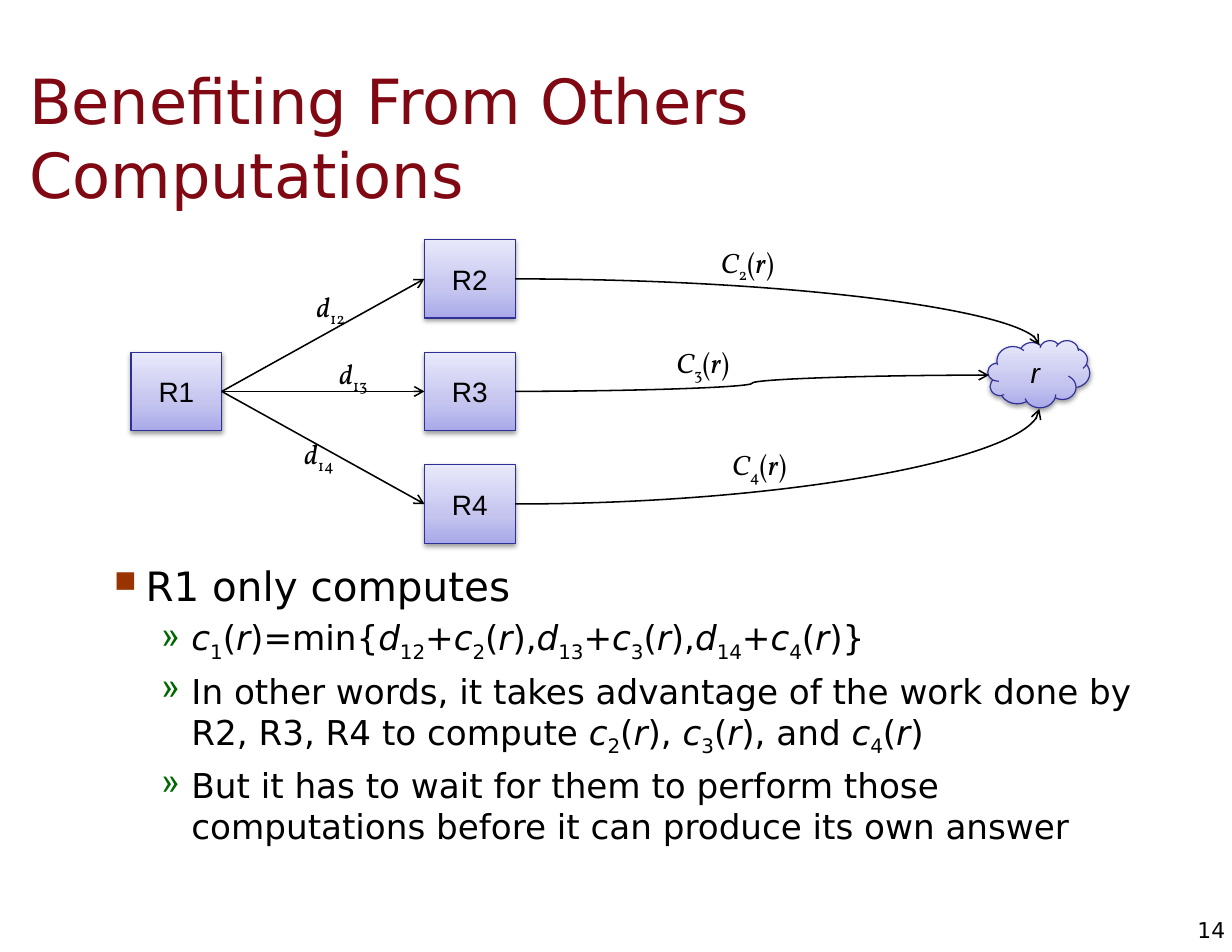
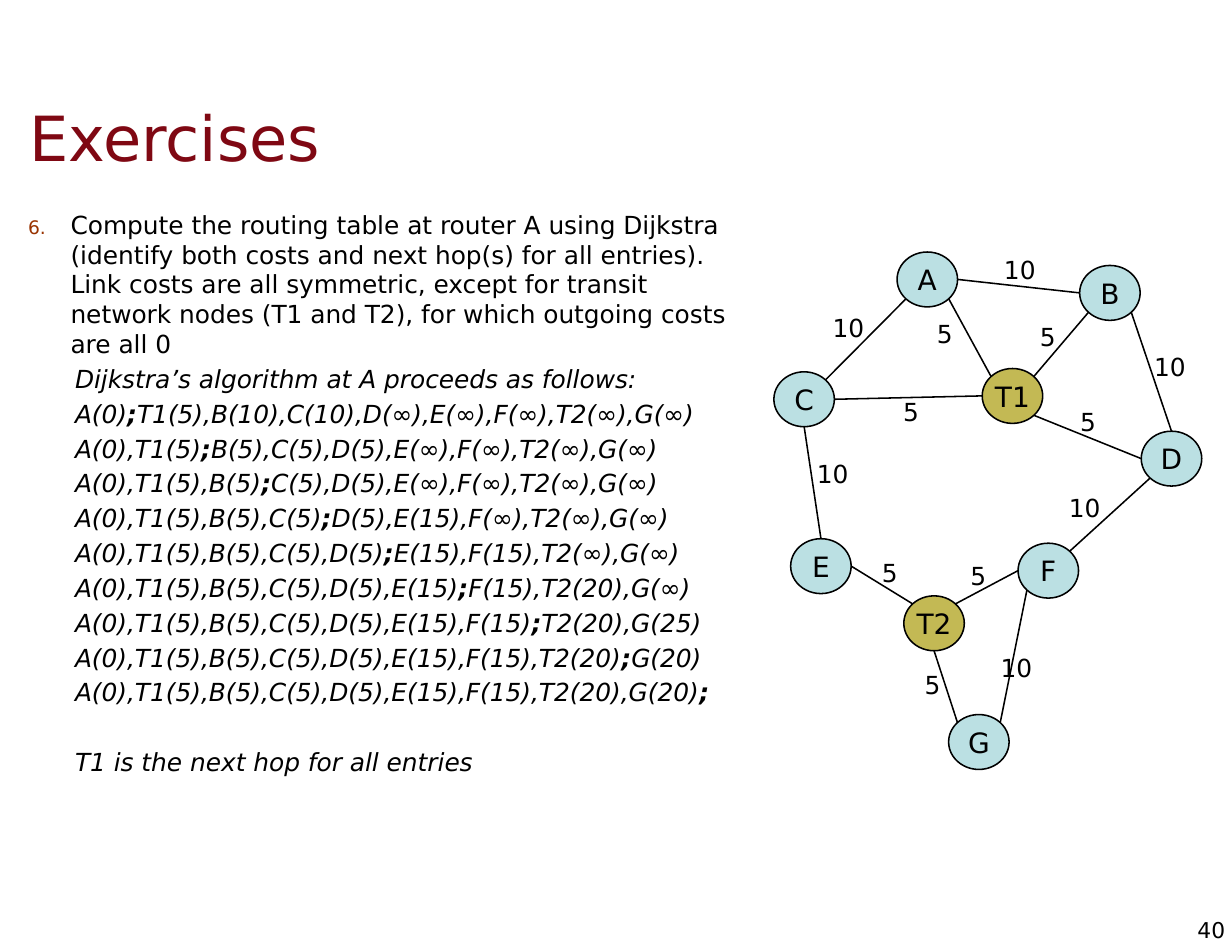
from dataclasses import dataclass

from pptx import Presentation, util as u
from pptx.dml.color import RGBColor
from pptx.enum import shapes, text
from pptx.oxml import parse_xml
from pptx.oxml.ns import nsdecls, qn


@dataclass(frozen=True)
class Theme:
    """Colours, fonts and type sizes of the deck."""
    ink: str = "000000"
    head: str = "7F0813"
    mark: str = "993300"
    sub: str = "006600"
    edge: str = "2F2F98"
    node: str = "BBE0E3"
    hub: str = "C3B954"
    fade: tuple = ((0, "A9A9E9"), (35, "C4C4EF"), (100, "E8E8FA"))
    sans: str = "DejaVu Sans"
    plain: str = "Arial"
    serif: str = "Vollkorn"
    title: int = 40
    lead: int = 26
    point: int = 22
    label: int = 18
    small: int = 16
    page: int = 14


T = Theme()
WIDE, HIGH = u.Inches(11), u.Inches(8.5)
COLS, ROWS = 110, 85
PAD = (0.11, 0.06)
ELL = shapes.MSO_SHAPE.OVAL
RECT = shapes.MSO_SHAPE.RECTANGLE
CLOUD = shapes.MSO_SHAPE.CLOUD
LINE = shapes.MSO_CONNECTOR.STRAIGHT
CURVE = shapes.MSO_CONNECTOR.CURVE
MID, TOP = text.MSO_ANCHOR.MIDDLE, text.MSO_ANCHOR.TOP
LEFT, MIDDLE, RIGHT = text.PP_ALIGN.LEFT, text.PP_ALIGN.CENTER, text.PP_ALIGN.RIGHT


@dataclass(frozen=True)
class Box:
    """A region in columns and rows of the slide grid."""
    x: float
    y: float
    w: float
    h: float

    def cell(self, x, y, w, h):
        """Return a box placed relative to this one."""
        return Box(self.x + x, self.y + y, w, h)

    def emu(self):
        """Return left, top, width and height for a shape."""
        cw, rh = WIDE / COLS, HIGH / ROWS
        return [round(v) for v in (self.x * cw, self.y * rh, self.w * cw, self.h * rh)]


def rgb(code):
    """Turn a hex code into a colour."""
    return RGBColor.from_string(code)


def xml(tag, attrs="", inner=""):
    """Make one drawing element."""
    return parse_xml(f"<a:{tag} {nsdecls('a')} {attrs}>{inner}</a:{tag}>")


def style(para, size, face=T.sans, color=T.ink, italic=None):
    """Set the font of a paragraph."""
    font = para.font
    font.size, font.name, font.italic = u.Pt(size), face, italic
    font.color.rgb = rgb(color)


def fill_runs(para, words):
    """Add runs split at bars: / italic, _ subscript, ! bold."""
    for part in filter(None, words.split("|")):
        run = para.add_run()
        run.text = part[1:] if part[0] in "/_!" else part
        if part[0] == "/":
            run.font.italic = True
        elif part[0] == "!":
            run.font.bold = True
        elif part[0] == "_":
            run._r.get_or_add_rPr().set("baseline", "-25000")


def frame(shape, anchor=MID, pad=(0, 0), wrap=True):
    """Set up the text frame of a shape."""
    tf = shape.text_frame
    tf.word_wrap, tf.vertical_anchor = wrap, anchor
    tf.margin_left = tf.margin_right = u.Inches(pad[0])
    tf.margin_top = tf.margin_bottom = u.Inches(pad[1])
    return tf


def note(slide, box, words, size, align=LEFT, anchor=MID, pad=(0, 0), wrap=True, **look):
    """Add a text box of one paragraph."""
    para = frame(slide.shapes.add_textbox(*box.emu()), anchor, pad, wrap).paragraphs[0]
    para.alignment = align
    fill_runs(para, words)
    style(para, size, **look)


def bullet(para, left, hang, *marks):
    """Give a paragraph its indent and bullet."""
    props = para._p.get_or_add_pPr()
    props.set("marL", str(u.Inches(left)))
    props.set("indent", str(-u.Inches(hang)))
    for mark in marks or [xml("buNone")]:
        props.append(mark)


def tint(color):
    """Make a bullet colour."""
    return xml("buClr", inner=f'<a:srgbClr val="{color}"/>')


def body(slide, box, items):
    """Fill a text region from (words, size, indent, marks, italic, gap) items."""
    tf = frame(slide.shapes.add_textbox(*box.emu()), TOP, PAD)
    for i, (words, size, dent, marks, italic, gap) in enumerate(items):
        para = tf.add_paragraph() if i else tf.paragraphs[0]
        para.level = min(i, 1)
        bullet(para, *dent, *marks)
        if i:
            para.space_before = u.Pt(gap)
        fill_runs(para, words)
        style(para, size, italic=italic)


def base(deck, title, page):
    """Add a slide with its title and page number."""
    slide = deck.slides.add_slide(deck.slide_layouts[6])
    note(slide, Box(1.5, 7, 105.3, 10.4), title, T.title, pad=PAD, color=T.head)
    note(slide, Box(106, 81.8, 3.4, 2.4), str(page), T.page, RIGHT, wrap=False)
    return slide


def shape(slide, kind, box, words, face, line, width, wrap):
    """Add a labelled shape without shadow."""
    item = slide.shapes.add_shape(kind, *box.emu())
    item.shadow.inherit = False
    item.line.color.rgb, item.line.width = rgb(line), u.Pt(width)
    para = frame(item, wrap=wrap).paragraphs[0]
    para.alignment = MIDDLE
    fill_runs(para, words)
    style(para, T.label, face)
    return item


def router(slide, kind, box, words):
    """Add a shaded shape with a soft shadow."""
    item = shape(slide, kind, box, words, T.plain, T.edge, 0.75, False)
    props = item._element.spPr
    stops = "".join(f'<a:gs pos="{at * 1000}"><a:srgbClr val="{c}"/></a:gs>' for at, c in T.fade)
    fade = xml("gradFill", 'rotWithShape="1"',
               f'<a:gsLst>{stops}</a:gsLst><a:lin ang="16200000" scaled="0"/>')
    props.find(qn("a:prstGeom")).addnext(fade)
    props.find(qn("a:effectLst")).append(xml(
        "outerShdw", 'blurRad="40000" dist="20000" dir="5400000" rotWithShape="0"',
        f'<a:srgbClr val="{T.ink}"><a:alpha val="38000"/></a:srgbClr>'))
    return item


def link(slide, start, end, kind=LINE, arrow=False):
    """Add a thin connector between two points."""
    item = slide.shapes.add_connector(kind, *start, *end)
    item.line.color.rgb, item.line.width = rgb(T.ink), u.Pt(1)
    props = item._element.spPr
    if arrow:
        props.find(qn("a:ln")).append(xml("tailEnd", 'type="arrow"'))
    props.append(xml("effectLst"))
    return item


def paths(slide, box):
    """Draw R1, its neighbours and their routes to r."""
    wide, high, step, col = 8.1, 7, 10.05, 26.2
    root = router(slide, RECT, box.cell(0, step, wide, high), "R1")
    near = [router(slide, RECT, box.cell(col, i * step, wide, high), f"R{i + 2}")
            for i in range(3)]
    for item in near:
        arm = link(slide, (0, 0), (0, 0), arrow=True)
        arm.begin_connect(root, 3)
        arm.end_connect(item, 1)
    goal = router(slide, CLOUD, box.cell(76.5, 9, 9.1, 6), "/r")
    ends = [(75.9 + 5.2, 9.4, 3), (76.6, 12.1, 2), (75.9 + 5.2, 15.1, 1)]
    for item, (x, y, site) in zip(near, ends):
        tip = box.cell(x, y, 0, 0).emu()[:2]
        arc = link(slide, (0, 0), tip, CURVE, True)
        arc.begin_connect(item, 3)
        arc.end_connect(goal, site)
        arc.end_x, arc.end_y = tip
        if site != 2:
            arc._element.spPr.find(qn("a:prstGeom")).set("prst", "curvedConnector2")
    costs = [(50.3, 0), (46.3, 9), (51.4, 18.1)]
    dists = [(14.1, 4), (16.1, 9.9), (13.1, 17.1)]
    for spots, span, form in ((costs, 8.1, "/C|_{}|(|/r|)"), (dists, 6, "/d|_1{}")):
        for n, (x, y) in enumerate(spots, 2):
            note(slide, box.cell(x, y, span, 4), form.format(n), T.label, RIGHT, TOP,
                 (0.1, 0.05), face=T.serif)


NODES = {"A": (11, 0), "B": (27.3, 1.2), "C": (0, 10.7), "D": (32.8, 16), "E": (1.5, 25.6),
         "F": (21.8, 26), "G": (15.6, 41.3), "T1": (18.6, 10.4), "T2": (11.6, 30.7)}
EDGES = [("A", "e", "B", "w", 10, 20.2, 0.2), ("A", "sw", "C", "ne", 10, 4.9, 5.4),
         ("A", "se", "T1", "nw", 5, 13.5, 5.9), ("C", "s", "E", "n", 10, 3.5, 18.4),
         ("C", "e", "T1", "w", 5, 10.5, 12.9), ("B", "sw", "T1", "ne", 5, 22.7, 6.2),
         ("B", "se", "D", "n", 10, 33.6, 8.9), ("D", "sw", "F", "ne", 10, 26, 21.5),
         ("T1", "se", "D", "w", 5, 26.3, 13.8), ("E", "e", "T2", "nw", 5, 8.6, 27.3),
         ("T2", "ne", "F", "w", 5, 16.5, 27.5), ("T2", "s", "G", "nw", 5, 12.4, 37.3),
         ("G", "ne", "F", "sw", 10, 19.9, 35.8)]


def rim(item, way):
    """Return the point of an ellipse in a compass direction."""
    far = 0.5 if len(way) == 1 else 0.5 ** 1.5
    dx = ("e" in way) - ("w" in way)
    dy = ("s" in way) - ("n" in way)
    return (round(item.left + item.width * (0.5 + far * dx)),
            round(item.top + item.height * (0.5 + far * dy)))


def graph(slide, box):
    """Draw the network with its link costs."""
    nodes = {}
    for name, (x, y) in NODES.items():
        item = shape(slide, ELL, box.cell(x, y, 5.4, 4.9), name, T.sans, T.ink, 1, True)
        item.fill.solid()
        item.fill.fore_color.rgb = rgb(T.hub if name[0] == "T" else T.node)
        nodes[name] = item
    for a, out, b, into, cost, x, y in EDGES:
        link(slide, rim(nodes[a], out), rim(nodes[b], into))
        note(slide, box.cell(x, y, 3.5, 2.7), str(cost), T.small, MIDDLE)


def benefit(deck):
    """Build the slide on shared computations."""
    slide = base(deck, "Benefiting From Others Computations", 14)
    c1, c2, c3, c4 = (f"/c|_{i}|(|/r|)" for i in range(1, 5))
    sums = ",|".join(f"/d|_1{i}|+|{c}" for i, c in ((2, c2), (3, c3), (4, c4)))
    points = [f"{c1}=min{{|{sums}}}",
              "In other words, it takes advantage of the work done by R2, R3, R4 to compute |"
              f"{c2}, |{c3}, and |{c4}",
              "But it has to wait for them to perform those computations before it can "
              "produce its own answer"]
    square = [tint(T.mark), xml("buSzPct", 'val="75000"'), xml("buChar", 'char="■"')]
    items = [("R1 only computes", T.lead, (0.42, 0.28), square, None, 0)]
    items += [(words, T.point, (0.83, 0.27), [tint(T.sub), xml("buChar", 'char="»"')], None, 4.4)
              for words in points]
    body(slide, Box(7.7, 49.5, 94.7, 31.6), items)
    paths(slide, Box(11.7, 21.4, 85.6, 27.1))


STEPS = """A(0);T1(5),B(10),C(10),D(∞),E(∞),F(∞),T2(∞),G(∞)
A(0),T1(5);B(5),C(5),D(5),E(∞),F(∞),T2(∞),G(∞)
A(0),T1(5),B(5);C(5),D(5),E(∞),F(∞),T2(∞),G(∞)
A(0),T1(5),B(5),C(5);D(5),E(15),F(∞),T2(∞),G(∞)
A(0),T1(5),B(5),C(5),D(5);E(15),F(15),T2(∞),G(∞)
A(0),T1(5),B(5),C(5),D(5),E(15);F(15),T2(20),G(∞)
A(0),T1(5),B(5),C(5),D(5),E(15),F(15);T2(20),G(25)
A(0),T1(5),B(5),C(5),D(5),E(15),F(15),T2(20);G(20)
A(0),T1(5),B(5),C(5),D(5),E(15),F(15),T2(20),G(20);"""


def drill(deck):
    """Build the slide with the routing exercise."""
    slide = base(deck, "Exercises", 40)
    task = ("Compute the routing table at router A using Dijkstra (identify both costs and next "
            "hop(s) for all entries). Link costs are all symmetric, except for transit network "
            "nodes (T1 and T2), for which outgoing costs are all 0")
    count = [tint(T.mark), xml("buSzPct", 'val="75000"'),
             xml("buAutoNum", 'type="arabicPeriod" startAt="6"')]
    lines = ["Dijkstra’s algorithm at A proceeds as follows:"]
    lines += STEPS.replace(";", "|!;|").split("\n")
    items = [(task, T.small, (0.52, 0.38), count, None, 0)]
    items += [(words, T.small, (0.83, 0.27), [], True, 3.2) for words in lines]
    items.append(("T1 is the next hop for all entries", T.small, (0.83, 0.27), [], True, 25.5))
    body(slide, Box(0, 18.1, 68.5, 63.3), items)
    graph(slide, Box(69.1, 22.5, 38.2, 46.2))


def main():
    """Build and save the deck."""
    deck = Presentation()
    deck.slide_width, deck.slide_height = WIDE, HIGH
    benefit(deck)
    drill(deck)
    deck.save("out.pptx")


if __name__ == "__main__":
    main()
